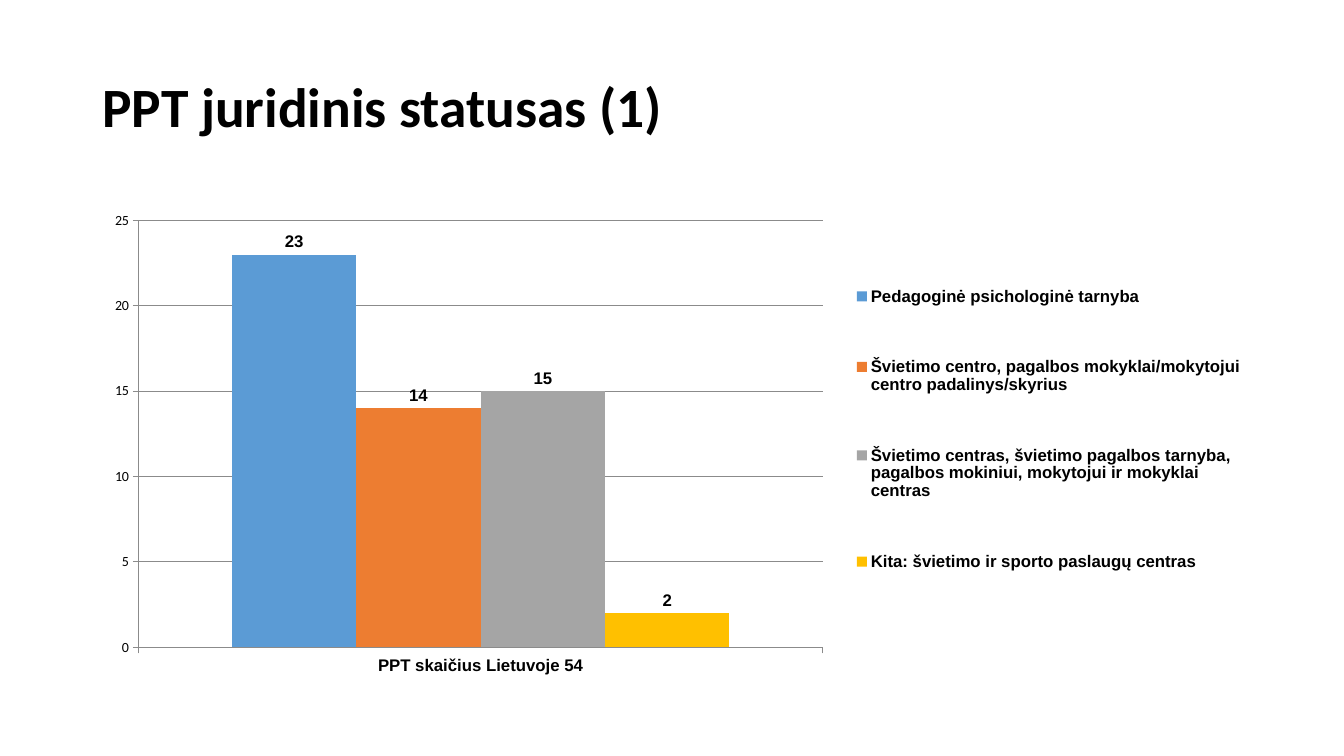
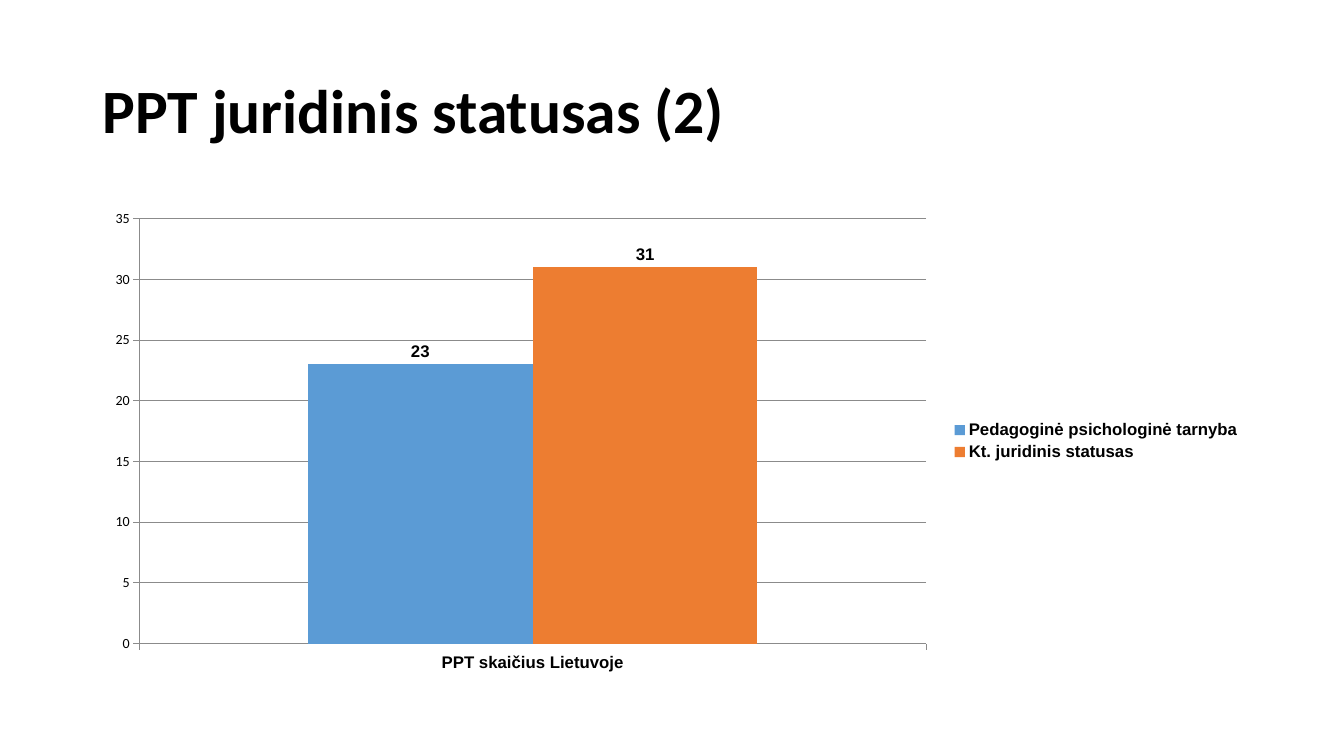
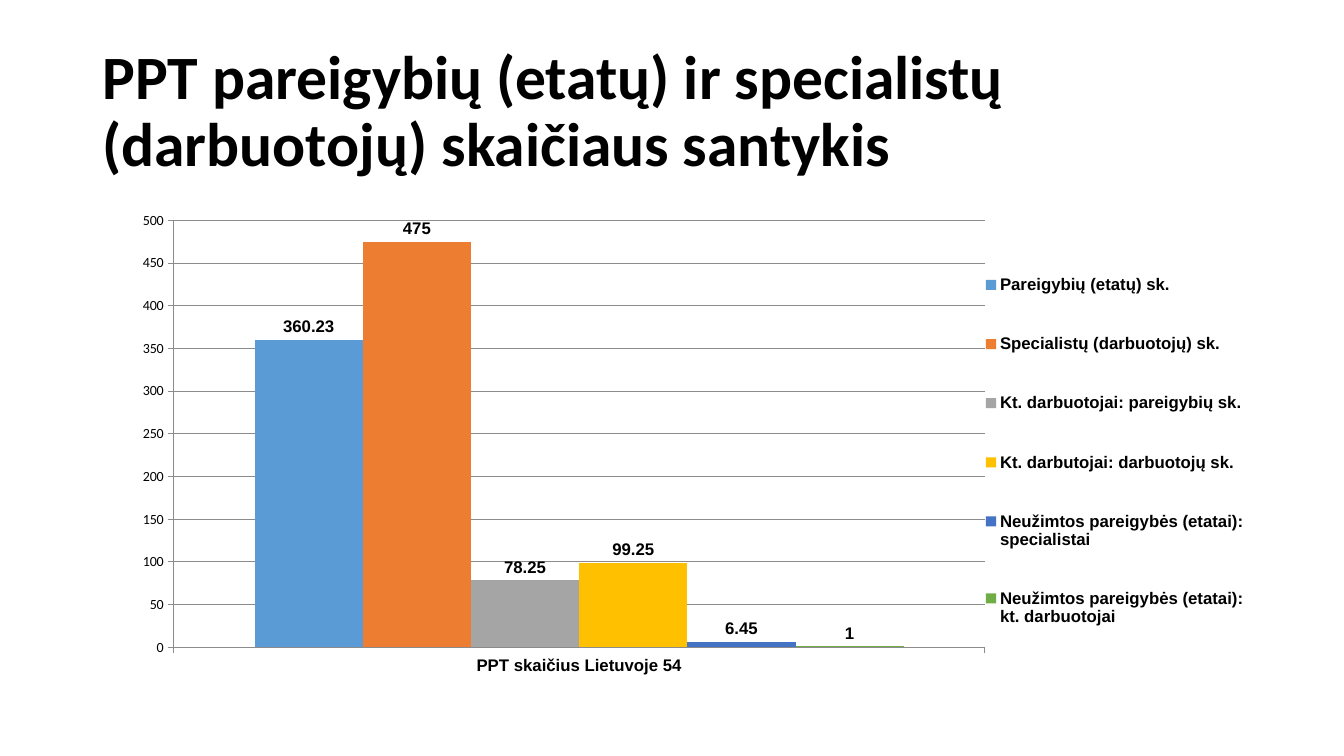
from lxml import etree
from pptx import Presentation
from pptx.chart.data import CategoryChartData
from pptx.dml.color import RGBColor
from pptx.enum.chart import XL_CHART_TYPE, XL_LABEL_POSITION, XL_LEGEND_POSITION, XL_TICK_MARK
from pptx.enum.text import MSO_ANCHOR
from pptx.oxml.ns import qn
from pptx.util import Cm, Pt

COLUMN = XL_CHART_TYPE.COLUMN_CLUSTERED
ABOVE = XL_LABEL_POSITION.OUTSIDE_END
RIGHT = XL_LEGEND_POSITION.RIGHT
TICK_OUT, TICK_NONE = XL_TICK_MARK.OUTSIDE, XL_TICK_MARK.NONE
MIDDLE = MSO_ANCHOR.MIDDLE

HUES = {"blue": "5B9BD5", "orange": "ED7D31", "grey": "A5A5A5",
        "gold": "FFC000", "navy": "4472C4", "green": "70AD47"}
INKS = {"text": "000000", "rule": "8B8B8B"}
LEFT, WIDTH = Cm(2.33), Cm(29.21)
LABEL = {"name": "Arial", "size": Pt(12), "bold": True}
SCALE = {"name": "Calibri", "size": Pt(10), "bold": False}

SLIDES = [
    {"title": "PPT juridinis statusas (1)", "size": 39.6, "top": 0.91,
     "group": "PPT skaičius Lietuvoje 54", "max": 25, "step": 5,
     "plot": (0.04, 0.04, 0.59, 0.89), "legend": (0.65, 0.07, 0.35, 0.81),
     "bars": [
         ("Pedagoginė psichologinė tarnyba", 23),
         ("Švietimo centro, pagalbos mokyklai/mokytojui centro padalinys/skyrius", 14),
         ("Švietimo centras, švietimo pagalbos tarnyba, pagalbos mokiniui, "
          "mokytojui ir mokyklai centras", 15),
         ("Kita: švietimo ir sporto paslaugų centras", 2)]},
    {"title": "PPT juridinis statusas (2)", "size": 44, "top": 1.01,
     "group": "PPT skaičius Lietuvoje", "max": 35, "step": 5,
     "bars": [
         ("Pedagoginė psichologinė tarnyba", 23),
         ("Kt. juridinis statusas", 31)]},
    {"title": "PPT pareigybių (etatų) ir specialistų (darbuotojų) skaičiaus santykis",
     "size": 44, "top": 1.01,
     "group": "PPT skaičius Lietuvoje 54", "max": 500, "step": 50,
     "plot": (0.07, 0.04, 0.7, 0.89), "legend": (0.77, 0.07, 0.23, 0.9),
     "bars": [
         ("Pareigybių (etatų) sk.", 360.23),
         ("Specialistų (darbuotojų) sk.", 475),
         ("Kt. darbuotojai: pareigybių sk.", 78.25),
         ("Kt. darbutojai: darbuotojų sk.", 99.25),
         ("Neužimtos pareigybės (etatai): specialistai", 6.45),
         ("Neužimtos pareigybės (etatai): kt. darbuotojai", 1)]},
]


def style(font, form):
    for key, value in form.items():
        setattr(font, key, value)
    font.color.rgb = RGBColor.from_string(INKS["text"])


def place(part, index, box, inner):
    """Fix a chart part at x, y, w, h, given as shares of the chart."""
    for old in part.findall(qn("c:layout")):
        part.remove(old)
    layout = etree.Element(qn("c:layout"))
    part.insert(index, layout)
    manual = etree.SubElement(layout, qn("c:manualLayout"))
    marks = [("layoutTarget", "inner")] if inner else []
    marks += [("xMode", "edge"), ("yMode", "edge"), *zip("xywh", box)]
    for tag, value in marks:
        etree.SubElement(manual, qn("c:" + tag)).set("val", str(value))


deck = Presentation()
deck.slide_width, deck.slide_height = Cm(33.87), Cm(19.05)
blank = deck.slide_layouts[6]

for page in SLIDES:
    slide = deck.slides.add_slide(blank)

    frame = slide.shapes.add_textbox(LEFT, Cm(page["top"]), WIDTH, Cm(3.68)).text_frame
    frame.word_wrap = True
    frame.vertical_anchor = MIDDLE
    title = frame.paragraphs[0]
    title.line_spacing = 0.9
    run = title.add_run()
    run.text = page["title"]
    style(run.font, {"name": "Calibri", "size": Pt(page["size"]), "bold": True})

    data = CategoryChartData()
    data.categories = [page["group"]]
    for name, value in page["bars"]:
        data.add_series(name, [value])
    chart = slide.shapes.add_chart(COLUMN, LEFT, Cm(5.07), WIDTH, Cm(12.09), data).chart
    chart.has_title = False
    style(chart.font, SCALE)

    plot = chart.plots[0]
    plot.gap_width, plot.overlap = 150, 0
    plot.vary_by_categories = False
    for bar, hue in zip(plot.series, HUES.values()):
        bar.format.fill.solid()
        bar.format.fill.fore_color.rgb = RGBColor.from_string(hue)
        labels = bar.data_labels
        labels.show_value = True
        labels.position = ABOVE
        style(labels.font, LABEL)

    groups, values = chart.category_axis, chart.value_axis
    values.minimum_scale, values.maximum_scale = 0, page["max"]
    values.major_unit = page["step"]
    values.has_major_gridlines = True
    for axis, form in ((groups, LABEL), (values, SCALE)):
        axis.major_tick_mark, axis.minor_tick_mark = TICK_OUT, TICK_NONE
        style(axis.tick_labels.font, form)
    for rule in (groups, values, values.major_gridlines):
        rule.format.line.width = Pt(0.75)
        rule.format.line.color.rgb = RGBColor.from_string(INKS["rule"])

    chart.has_legend = True
    legend = chart.legend
    legend.position = RIGHT
    legend.include_in_layout = False
    style(legend.font, LABEL)
    if "plot" in page:
        area = chart.element.find(".//" + qn("c:plotArea"))
        place(area, 0, page["plot"], True)
        place(area.getnext(), 1, page["legend"], False)

deck.save("out.pptx")
